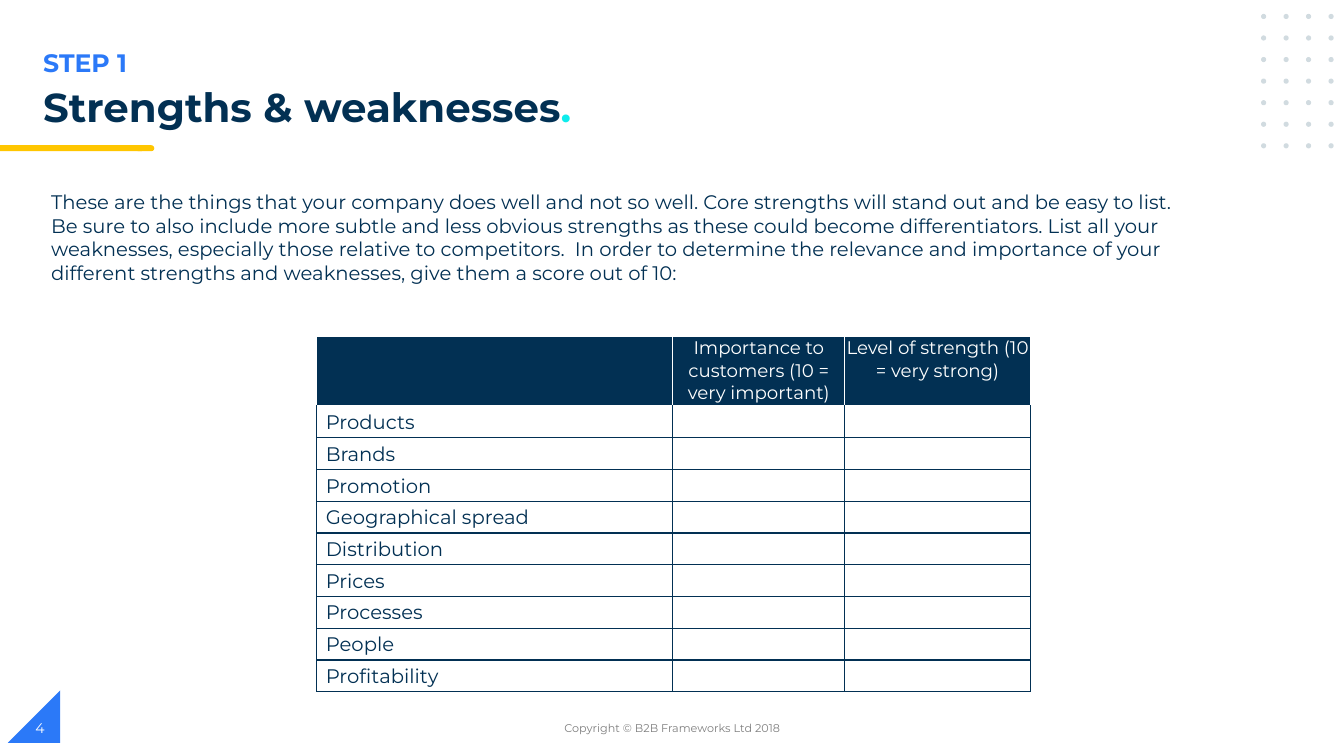
import pptx
import pptx.util
from lxml import etree
from pptx.dml.color import RGBColor
from pptx.enum.shapes import MSO_SHAPE
from pptx.enum.text import MSO_ANCHOR, PP_ALIGN
from pptx.oxml.ns import qn
from pptx.util import Cm

COLORS = {"navy": "023053", "blue": "2B79F8", "cyan": "0EECEC", "yellow": "FFC600",
          "dot": "D1DBE0", "grey": "7F7F7F", "white": "FFFFFF"}
FONT = "Montserrat"
INTRO = ("These are the things that your company does well and not so well. Core strengths will "
         "stand out and be easy to list. Be sure to also include more subtle and less obvious "
         "strengths as these could become differentiators. List all your weaknesses, especially "
         "those relative to competitors.  In order to determine the relevance and importance of "
         "your different strengths and weaknesses, give them a score out of 10:")
HEADINGS = ["", "Importance to customers (10 = very important)",
            "Level of strength (10 = very strong)"]
FACTORS = ["Products", "Brands", "Promotion", "Geographical spread", "Distribution",
           "Prices", "Processes", "People", "Profitability"]


def color(name):
    return RGBColor.from_string(COLORS[name])


def style(para, size, color_name, bold=False):
    para.font.name = FONT
    para.font.size = pptx.util.Pt(size)
    para.font.bold = bold
    para.font.color.rgb = color(color_name)


def add_shape(page, kind, left, top, width, height, color_name):
    shape = page.shapes.add_shape(kind, Cm(left), Cm(top), Cm(width), Cm(height))
    shape.shadow.inherit = False
    shape.fill.solid()
    shape.fill.fore_color.rgb = color(color_name)
    shape.line.fill.background()
    return shape


def add_text(page, left, top, width, height, text, size, color_name,
             bold=False, align=PP_ALIGN.LEFT, anchor=MSO_ANCHOR.TOP):
    box = page.shapes.add_textbox(Cm(left), Cm(top), Cm(width), Cm(height))
    box.text_frame.word_wrap = True
    box.text_frame.vertical_anchor = anchor
    para = box.text_frame.paragraphs[0]
    para.alignment = align
    para.add_run().text = text
    style(para, size, color_name, bold)
    return para


def add_dot_grid(page, left, top, width, height, columns=4, rows=7, size=0.13):
    across = (width - size) / (columns - 1)
    down = (height - size) / (rows - 1)
    for row in range(rows):
        for column in range(columns):
            add_shape(page, MSO_SHAPE.OVAL, left + column * across, top + row * down,
                      size, size, "dot")


def add_heading(page, left, top, width):
    add_text(page, left, top, 17, 1.02, "STEP 1", 18, "blue", bold=True)
    title = add_text(page, left, top + 1.02, width, 1.42, "Strengths & weaknesses",
                     28.8, "navy", bold=True)
    title.line_spacing = 0.9
    full_stop = title.add_run()
    full_stop.text = "."
    full_stop.font.color.rgb = color("cyan")
    # Yellow underline with a rounded end
    add_shape(page, MSO_SHAPE.FLOWCHART_TERMINATOR, 3.41, top + 2.6, 0.48, 0.15, "yellow")
    add_shape(page, MSO_SHAPE.RECTANGLE, 0, top + 2.6, 3.58, 0.15, "yellow")


def set_borders(cell, sides):
    """sides maps L, R, T and B to colour names."""
    properties = cell._tc.get_or_add_tcPr()
    for side, color_name in sides.items():
        line = etree.SubElement(properties, qn(f"a:ln{side}"), w="12700")
        fill = etree.SubElement(line, qn("a:solidFill"))
        etree.SubElement(fill, qn("a:srgbClr"), val=COLORS[color_name])


def add_score_table(page, left, top, widths, header_height, row_height):
    height = header_height + row_height * len(FACTORS)
    frame = page.shapes.add_table(len(FACTORS) + 1, len(widths), Cm(left), Cm(top),
                                  Cm(sum(widths)), Cm(height))
    table = frame.table
    for column, width in zip(table.columns, widths):
        column.width = Cm(width)
    contents = [HEADINGS] + [[factor, "", ""] for factor in FACTORS]
    for index, texts in enumerate(contents):
        header = index == 0
        table.rows[index].height = Cm(header_height if header else row_height)
        edge = "white" if header else "navy"
        upper = "white" if index <= 1 else "navy"
        for cell, text in zip(table.rows[index].cells, texts):
            cell.margin_left = cell.margin_right = cell.margin_top = Cm(0.03)
            cell.margin_bottom = 0
            set_borders(cell, {"L": edge, "R": edge, "T": upper, "B": edge})
            if header:
                cell.fill.solid()
                cell.fill.fore_color.rgb = color("navy")
            else:
                cell.fill.background()
                cell.vertical_anchor = MSO_ANCHOR.MIDDLE
            if text:
                para = cell.text_frame.paragraphs[0]
                para.text = text
                if header:
                    para.alignment = PP_ALIGN.CENTER
                else:
                    para._p.get_or_add_pPr().set("marL", str(Cm(0.2)))
                style(para, 13 if header else 14, "white" if header else "navy")


def add_footer(page, top):
    corner = add_shape(page, MSO_SHAPE.RIGHT_TRIANGLE, 0.2, top - 0.43, 1.32, 1.32, "blue")
    corner._element.spPr.xfrm.set("flipH", "1")
    add_text(page, 11.23, top, 11.43, 1.02, "Copyright © B2B Frameworks Ltd 2018", 8, "grey",
             align=PP_ALIGN.CENTER, anchor=MSO_ANCHOR.MIDDLE)
    add_text(page, 0.64, top, 7.62, 1.02, "4", 10, "white", anchor=MSO_ANCHOR.MIDDLE)


def main():
    deck = pptx.Presentation()
    deck.slide_width, deck.slide_height = Cm(33.87), Cm(19.05)
    page = deck.slides.add_slide(deck.slide_layouts[6])
    add_dot_grid(page, 31.78, 0.35, 1.83, 3.39)
    add_heading(page, 0.84, 1.06, 21.36)
    add_text(page, 1.04, 4.67, 28.93, 3.25, INTRO, 14, "navy")
    add_score_table(page, 7.98, 8.47, [8.97, 4.34, 4.67], 1.76, 0.8)
    add_footer(page, 17.83)
    deck.save("out.pptx")


if __name__ == "__main__":
    main()
